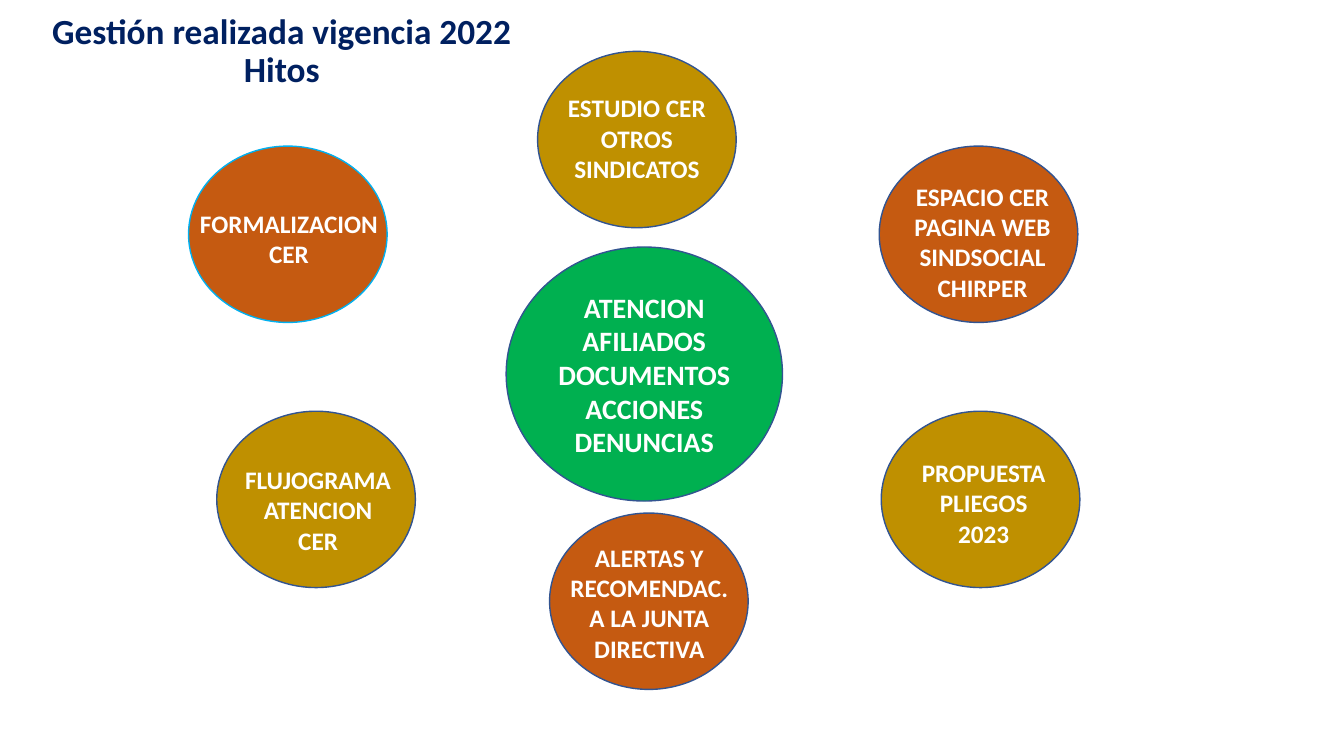
import pptx
import pptx.util
import pptx.dml.color
import pptx.enum.shapes
import pptx.enum.text

WIDE, HIGH = 13.33, 7.5
THEME = {
    "font": "Calibri", "navy": "002060", "white": "FFFFFF",
    "rust": "C55A11", "gold": "BF9000", "green": "00B050",
    "edge": "325491", "sky": "00B0F0",
    "title": 25.2, "node": 18, "core": 20,
}
ALIGN = pptx.enum.text.PP_ALIGN
ANCHOR = pptx.enum.text.MSO_ANCHOR
FIT = pptx.enum.text.MSO_AUTO_SIZE

# Circle sizes, in percent of the slide
SMALL, LARGE = (14.78, 23.33), (20.56, 33.6)

# Left, top, size, fill, edge, type, label shift (x, y), label width, lines, text
NODES = [
    (14.03, 19.33, SMALL, "rust", "sky", "node", (0.08, 7.6), 14.78, 2,
     ["FORMALIZACION CER"]),
    (40, 6.8, SMALL, "gold", "edge", "node", (0, 4.8), 14.78, 3,
     ["ESTUDIO CER", "OTROS SINDICATOS"]),
    (65.42, 19.33, SMALL, "rust", "edge", "node", (0.3, 4), 14.78, 4,
     ["ESPACIO CER", "PAGINA WEB", "SINDSOCIAL", "CHIRPER"]),
    (16.13, 54.4, SMALL, "gold", "edge", "node", (0.15, 6.4), 14.78, 3,
     ["FLUJOGRAMA", "ATENCION", "CER"]),
    (65.57, 54.4, SMALL, "gold", "edge", "node", (0.23, 5.47), 14.78, 3,
     ["PROPUESTA", "PLIEGOS", "2023"]),
    (40.89, 67.87, SMALL, "rust", "edge", "node", (-0.98, 3.2), 16.8, 4,
     ["ALERTAS Y RECOMENDAC.", "A LA JUNTA DIRECTIVA"]),
    (37.66, 32.67, LARGE, "green", "edge", "core", (2.93, 5.07), 14.7, 5,
     ["ATENCION AFILIADOS", "DOCUMENTOS ACCIONES DENUNCIAS"]),
]


def paint(name):
    return pptx.dml.color.RGBColor.from_string(THEME[name])


def place(box):
    """Turn percent of the slide into lengths."""
    return [pptx.util.Inches(part * side / 100)
            for part, side in zip(box, (WIDE, HIGH, WIDE, HIGH))]


def write(slide, box, lines, size, tint, frame, space=1.0):
    text = slide.shapes.add_textbox(*place(box)).text_frame
    for key, value in {"word_wrap": True, **frame}.items():
        setattr(text, key, value)
    text.text = "\n".join(lines)
    for para in text.paragraphs:
        para.alignment = ALIGN.CENTER
        para.line_spacing = space
        for run in para.runs:
            look = {"name": THEME["font"], "bold": True,
                    "size": pptx.util.Pt(THEME[size])}
            for key, value in look.items():
                setattr(run.font, key, value)
            run.font.color.rgb = paint(tint)


def title(slide, box):
    write(slide, box, ["Gestión realizada vigencia 2022\vHitos"], "title", "navy",
          {"vertical_anchor": ANCHOR.MIDDLE, "auto_size": FIT.NONE}, 0.9)


def node(slide, box, fill, edge, size, shift, width, count, lines):
    # Circle
    kind = pptx.enum.shapes.MSO_SHAPE.FLOWCHART_CONNECTOR
    disc = slide.shapes.add_shape(kind, *place(box))
    disc.shadow.inherit = False
    disc.fill.solid()
    disc.fill.fore_color.rgb = paint(fill)
    disc.line.color.rgb = paint(edge)
    disc.line.width = pptx.util.Pt(1)
    # Label, as tall as its lines plus the margins
    tall = (count * THEME[size] * 1.2 / 72 + 0.1) / HIGH * 100
    area = (box[0] + shift[0], box[1] + shift[1], width, tall)
    write(slide, area, lines, size, "white", {"auto_size": FIT.SHAPE_TO_FIT_TEXT})


def main():
    deck = pptx.Presentation()
    deck.slide_width = pptx.util.Inches(WIDE)
    deck.slide_height = pptx.util.Inches(HIGH)
    slide = deck.slides.add_slide(deck.slide_layouts[6])
    title(slide, (2.03, 2, 37.88, 9.73))
    for left, top, size, *rest in NODES:
        node(slide, (left, top, *size), *rest)
    deck.save("out.pptx")


if __name__ == "__main__":
    main()
